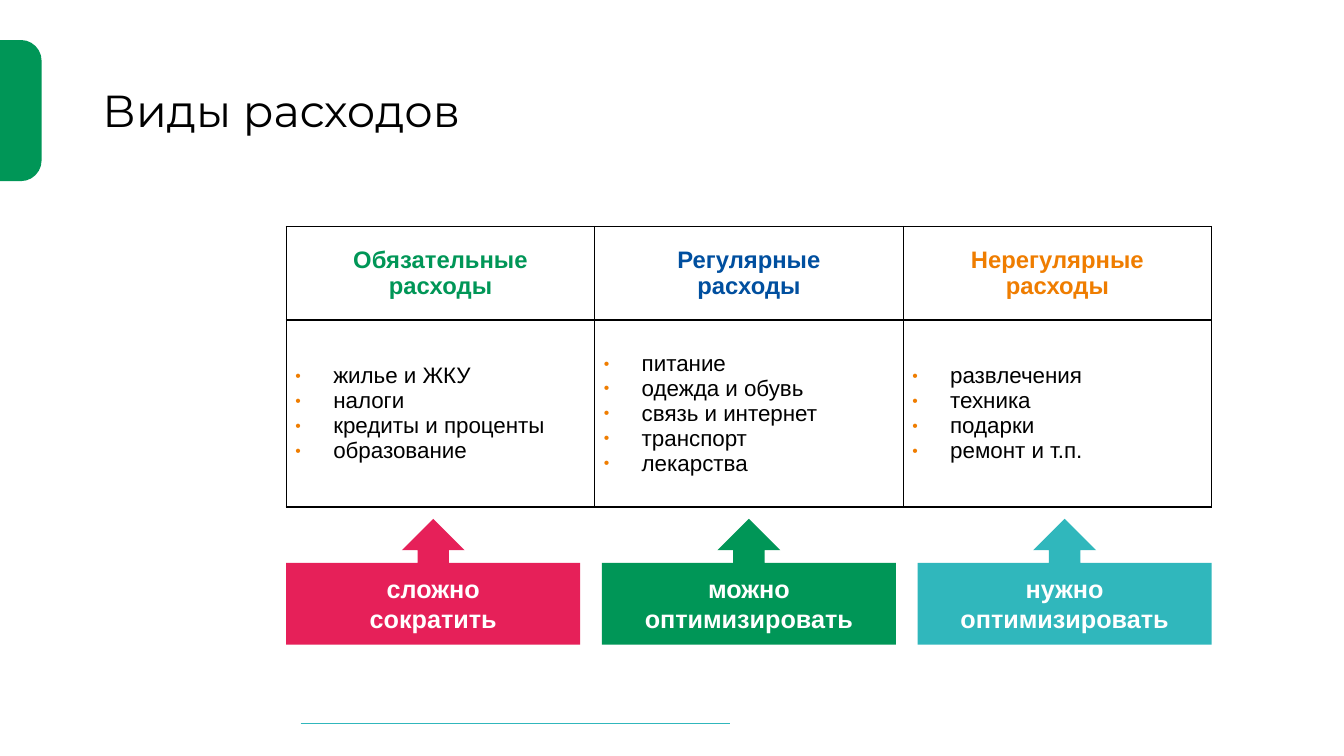
import lxml.etree
import pptx
import pptx.dml.color
import pptx.enum.shapes
import pptx.enum.text
import pptx.oxml
import pptx.oxml.ns
import pptx.util

Pt = pptx.util.Pt
SHAPE = pptx.enum.shapes.MSO_SHAPE
CENTER = pptx.enum.text.PP_ALIGN.CENTER
MIDDLE = pptx.enum.text.MSO_ANCHOR.MIDDLE
NAMESPACE = pptx.oxml.ns.nsdecls("a")
COLORS = {
    "green": "009657",
    "blue": "004F9F",
    "orange": "EF7D00",
    "pink": "E62059",
    "teal": "30B7BC",
    "black": "000000",
    "white": "FFFFFF",
}


def rgb(name):
    return pptx.dml.color.RGBColor.from_string(COLORS[name])


def write(para, text, size, color, bold=False, font="Arial"):
    """Fill a paragraph with one run per line of text, split by line breaks."""
    for number, line in enumerate(text.split("\n")):
        if number:
            para.add_line_break()
        span = para.add_run()
        span.text = line
        span.font.name = font
        span.font.size = Pt(size)
        span.font.bold = bold
        span.font.color.rgb = rgb(color)


deck = pptx.Presentation()
deck.slide_width = Pt(960)
deck.slide_height = Pt(540)
page = deck.slides.add_slide(deck.slide_layouts[5])

# Title
title = page.shapes.title
title.left, title.top, title.width, title.height = Pt(66), Pt(28.8), Pt(828), Pt(104.4)
title.text_frame.vertical_anchor = MIDDLE
title.text_frame.word_wrap = True
heading = title.text_frame.paragraphs[0]
heading.alignment = pptx.enum.text.PP_ALIGN.LEFT
heading.line_spacing = 0.9
write(heading, "Виды расходов", 32, "black", font="Montserrat")

# Footer rule and side tab
rule = page.shapes.add_connector(
    pptx.enum.shapes.MSO_CONNECTOR.STRAIGHT, Pt(214.7), Pt(516.8), Pt(521.4), Pt(516.8)
)
rule.line.color.rgb = rgb("teal")
rule.line.width = Pt(0.75)
lxml.etree.SubElement(rule._element.spPr, pptx.oxml.ns.qn("a:effectLst"))

tab = page.shapes.add_shape(
    SHAPE.ROUND_2_SAME_RECTANGLE, Pt(-35.5), Pt(64.2), Pt(100.8), Pt(29.6)
)
tab.rotation = 90
tab.adjustments[0] = 0.5
tab.shadow.inherit = False
tab.fill.solid()
tab.fill.fore_color.rgb = rgb("green")
tab.line.fill.background()

# Table of expense kinds
LEFT, WIDTH = 204.5, 661
expenses = [
    ("Обязательные\nрасходы", "green",
     ["жилье и ЖКУ", "налоги", "кредиты и проценты", "образование"]),
    ("Регулярные\nрасходы", "blue",
     ["питание", "одежда и обувь", "связь и интернет", "транспорт", "лекарства"]),
    ("Нерегулярные\nрасходы", "orange",
     ["развлечения", "техника", "подарки", "ремонт и т.п."]),
]
table = page.shapes.add_table(2, 3, Pt(LEFT), Pt(161.8), Pt(WIDTH), Pt(200.4)).table
table.first_row = False
table.horz_banding = False
table.rows[0].height = Pt(66.8)
table.rows[1].height = Pt(133.6)

for index, (kind, color, items) in enumerate(expenses):
    table.columns[index].width = Pt(WIDTH / 3)
    header, body = table.cell(0, index), table.cell(1, index)
    for cell in (header, body):
        cell.vertical_anchor = MIDDLE
        cell.margin_left = cell.margin_right = Pt(6.6)
        cell.margin_top = cell.margin_bottom = Pt(3.3)
        properties = cell._tc.get_or_add_tcPr()
        for side in "LRTB":
            properties.append(pptx.oxml.parse_xml(
                f'<a:ln{side} {NAMESPACE} w="12700"><a:solidFill>'
                f'<a:srgbClr val="{COLORS["black"]}"/></a:solidFill></a:ln{side}>'
            ))
        cell.fill.background()

    para = header.text_frame.paragraphs[0]
    para.alignment = CENTER
    write(para, kind, 17, color, bold=True)

    for number, item in enumerate(items):
        box = body.text_frame
        para = box.add_paragraph() if number else box.paragraphs[0]
        settings = para._p.get_or_add_pPr()
        settings.set("marL", str(Pt(27)))
        settings.set("indent", str(-Pt(27)))
        for bullet in (
            f'<a:buClr {NAMESPACE}><a:srgbClr val="{COLORS["orange"]}"/></a:buClr>',
            f'<a:buSzPct {NAMESPACE} val="70000"/>',
            f'<a:buFont {NAMESPACE} typeface="Arial"/>',
            f'<a:buChar {NAMESPACE} char="•"/>',
        ):
            settings.append(pptx.oxml.parse_xml(bullet))
        write(para, item, 16, "black")

# Callouts pointing at the columns
advice = [
    ("сложно\nсократить", "pink"),
    ("можно оптимизировать", "green"),
    ("нужно оптимизировать", "teal"),
]
CALLOUT_WIDTH = 210
step = (WIDTH - CALLOUT_WIDTH) / 2
for index, (text, color) in enumerate(advice):
    callout = page.shapes.add_shape(
        SHAPE.UP_ARROW_CALLOUT, Pt(LEFT + index * step), Pt(370.6), Pt(CALLOUT_WIDTH), Pt(89.8)
    )
    for number, value in enumerate((0.25, 0.25, 0.25, 0.65)):
        callout.adjustments[number] = value
    callout.shadow.inherit = False
    callout.fill.solid()
    callout.fill.fore_color.rgb = rgb(color)
    callout.line.fill.background()
    callout.text_frame.word_wrap = True
    callout.text_frame.vertical_anchor = MIDDLE
    para = callout.text_frame.paragraphs[0]
    para.alignment = CENTER
    write(para, text, 18, "white", bold=True)

deck.save("out.pptx")
